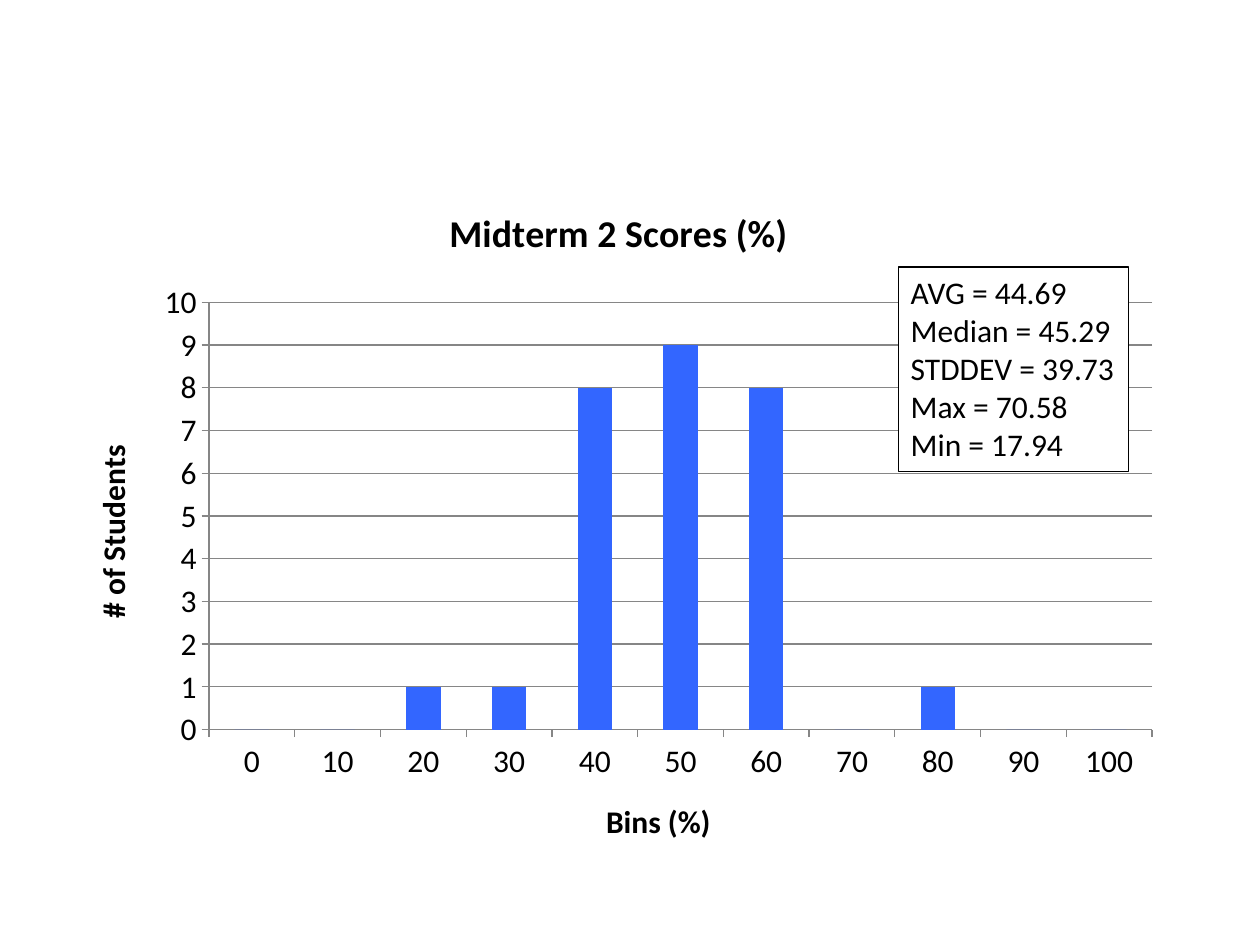
import dataclasses
import pptx
import pptx.chart.data
import pptx.dml.color
import pptx.enum.chart
import pptx.enum.shapes
import pptx.enum.text
import pptx.util

Inches = pptx.util.Inches


@dataclasses.dataclass
class Theme:
    font: str = "Calibri"
    ink: str = "000000"
    paper: str = "FFFFFF"
    bar: str = "3366FF"
    grid: str = "868686"
    head: float = 21.6
    body: float = 18
    thin: float = 0.75


def color(code):
    return pptx.dml.color.RGBColor.from_string(code)


def style(font, theme, size, bold=False):
    font.name = theme.font
    font.size = pptx.util.Pt(size)
    font.bold = bold
    font.color.rgb = color(theme.ink)


def write(frame, text, theme, size=18, bold=False, align=None):
    frame.text = text
    for para in frame.paragraphs:
        para.alignment = align
        for run in para.runs:
            style(run.font, theme, size, bold)


class Deck:
    """Hold the theme and the current slide, and add elements to it."""

    def __init__(self, theme, width, height):
        self.theme = theme
        self.file = pptx.Presentation()
        self.file.slide_width = Inches(width)
        self.file.slide_height = Inches(height)
        self.slide = self.file.slides.add_slide(self.file.slide_layouts[6])

    def line(self, line, code):
        line.color.rgb = color(code)
        line.width = pptx.util.Pt(self.theme.thin)

    def axis(self, axis, title):
        write(axis.axis_title.text_frame, title, self.theme,
              size=self.theme.body, bold=True)
        style(axis.tick_labels.font, self.theme, self.theme.body)
        axis.major_tick_mark = pptx.enum.chart.XL_TICK_MARK.OUTSIDE
        axis.minor_tick_mark = pptx.enum.chart.XL_TICK_MARK.NONE
        self.line(axis.format.line, self.theme.grid)

    def chart(self, box, title, bins, counts, names):
        data = pptx.chart.data.CategoryChartData()
        data.categories = bins
        data.add_series("Series 1", counts)
        kind = pptx.enum.chart.XL_CHART_TYPE.COLUMN_CLUSTERED
        chart = self.slide.shapes.add_chart(kind, *map(Inches, box), data).chart
        style(chart.font, self.theme, self.theme.body)
        write(chart.chart_title.text_frame, title, self.theme,
              size=self.theme.head, bold=True)
        chart.chart_title.include_in_layout = False
        chart.has_legend = False
        self.axis(chart.category_axis, names[0])
        scale = chart.value_axis
        self.axis(scale, names[1])
        scale.minimum_scale, scale.maximum_scale, scale.major_unit = 0, 10, 1
        scale.has_major_gridlines = True
        self.line(scale.major_gridlines.format.line, self.theme.grid)
        plot = chart.plots[0]
        plot.gap_width = 150
        plot.vary_by_categories = False
        fill = plot.series[0].format.fill
        fill.solid()
        fill.fore_color.rgb = color(self.theme.bar)

    def note(self, box, lines):
        rect = pptx.enum.shapes.MSO_SHAPE.RECTANGLE
        shape = self.slide.shapes.add_shape(rect, *map(Inches, box))
        shape.shadow.inherit = False
        shape.fill.solid()
        shape.fill.fore_color.rgb = color(self.theme.paper)
        self.line(shape.line, self.theme.ink)
        frame = shape.text_frame
        write(frame, "\n".join(lines), self.theme, size=self.theme.body,
              align=pptx.enum.text.PP_ALIGN.LEFT)
        frame.word_wrap = False
        frame.auto_size = pptx.enum.text.MSO_AUTO_SIZE.SHAPE_TO_FIT_TEXT
        frame.vertical_anchor = pptx.enum.text.MSO_ANCHOR.TOP


def main():
    deck = Deck(Theme(), 10, 7.5)
    deck.chart((0.5, 1.42, 8.82, 5.5), "Midterm 2 Scores (%)",
               range(0, 101, 10), (0, 0, 1, 1, 8, 9, 8, 0, 1, 0, 0),
               ("Bins (%)", "# of Students"))
    stats = {"AVG": 44.69, "Median": 45.29, "STDDEV": 39.73,
             "Max": 70.58, "Min": 17.94}
    deck.note((7.13, 2.12, 1.83, 1.62),
              [f"{name} = {value}" for name, value in stats.items()])
    deck.file.save("out.pptx")


if __name__ == "__main__":
    main()
